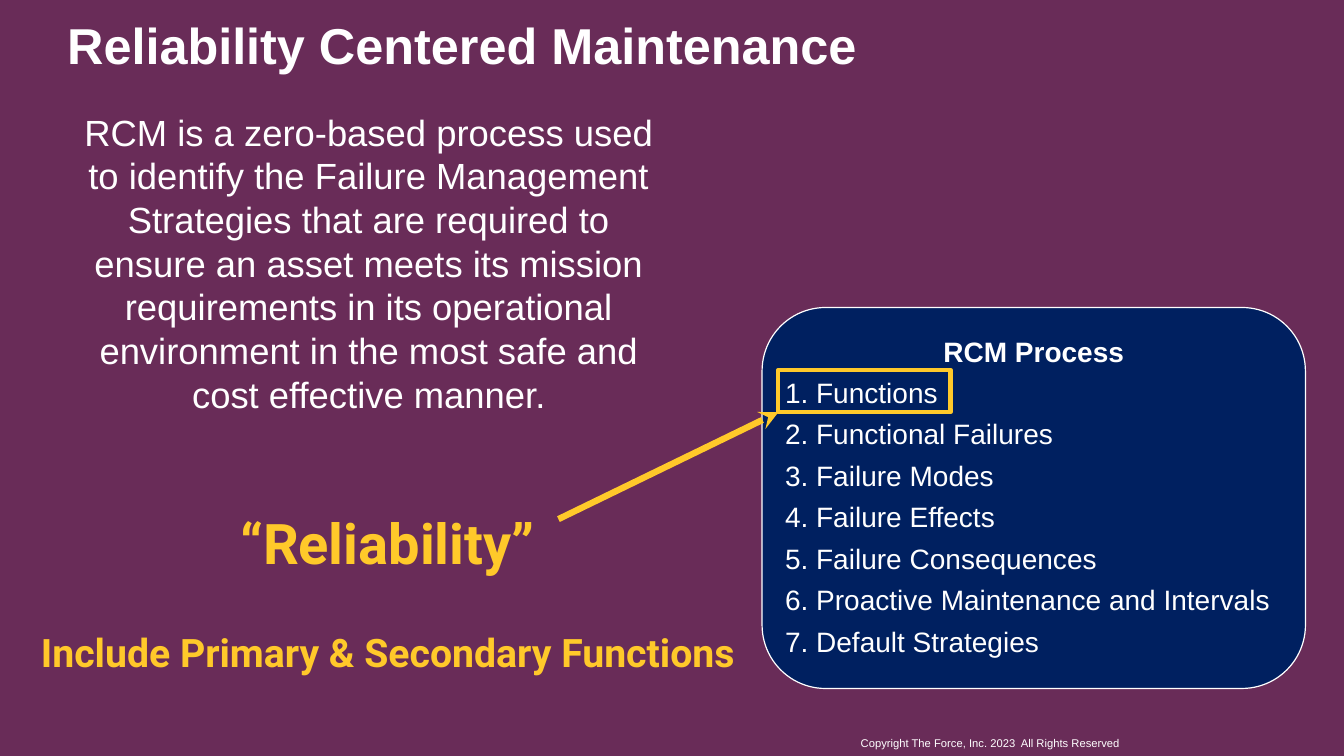
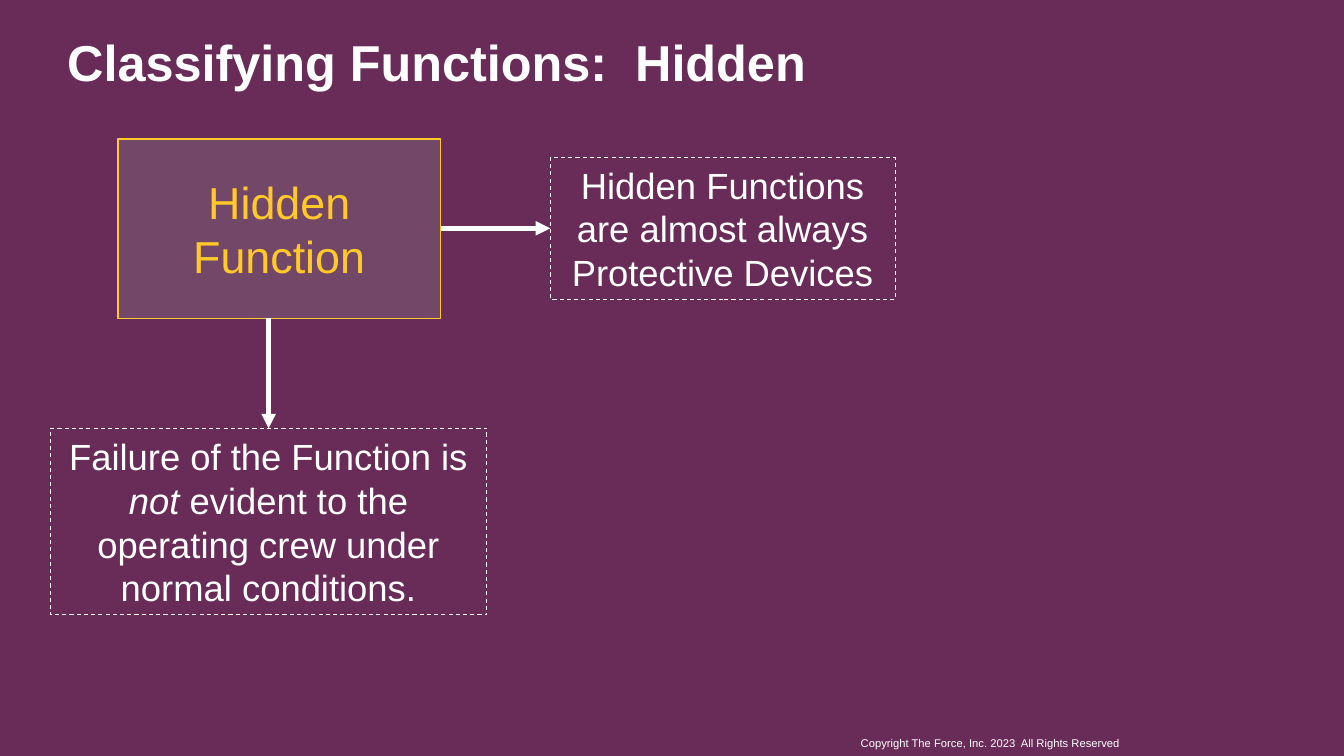
import typing

import lxml.etree
import pptx
import pptx.dml.color
import pptx.enum.dml
import pptx.enum.shapes
import pptx.enum.text
import pptx.oxml.ns
import pptx.util

COLORS = {
    "plum": "692C58",
    "navy": "002060",
    "gold": "FFC92A",
    "white": "FFFFFF",
    "gray": "919191",
}
BODY_FONT = "Arial"
CALLOUT_FONT = "Roboto"
COPYRIGHT = "Copyright The Force, Inc. 2023  All Rights Reserved"
PROCESS_STEPS = [
    "Functions",
    "Functional Failures",
    "Failure Modes",
    "Failure Effects",
    "Failure Consequences",
    "Proactive Maintenance and Intervals",
    "Default Strategies",
]
DEFINITION = (
    "RCM is a zero-based process used to identify the Failure Management "
    "Strategies that are required to ensure an asset meets its mission "
    "requirements in its operational environment in the most safe and "
    "cost effective manner."
)
ALIGN = pptx.enum.text.PP_ALIGN
ANCHOR = pptx.enum.text.MSO_ANCHOR
SHAPE = pptx.enum.shapes.MSO_SHAPE


class Box(typing.NamedTuple):
    """A rectangle in inches."""

    left: float
    top: float
    width: float
    height: float

    def inner(self, left, top, width, height):
        """Return an inner box given in percent of this one."""
        return Box(
            self.left + self.width * left / 100,
            self.top + self.height * top / 100,
            self.width * width / 100,
            self.height * height / 100,
        )

    def point(self, across, down):
        """Return a point given in percent of this box."""
        return self.inner(across, down, 0, 0)[:2]

    def emu(self):
        """Return the four lengths for python-pptx."""
        return [pptx.util.Inches(length) for length in self]


SLIDE = Box(0, 0, 13.33, 7.5)


def rgb(color):
    """Look up a named colour."""
    return pptx.dml.color.RGBColor.from_string(COLORS[color])


def write(frame, paragraphs, size, color="white", font=BODY_FONT, bold=False,
          align=ALIGN.CENTER, anchor=ANCHOR.TOP, inset=None):
    """Fill a text frame with paragraphs, each a list of (text, italic) runs."""
    frame.word_wrap = True
    frame.vertical_anchor = anchor
    if inset is not None:
        frame.margin_left = frame.margin_right = pptx.util.Inches(inset)
        frame.margin_top = frame.margin_bottom = pptx.util.Inches(inset)
    for index, runs in enumerate(paragraphs):
        paragraph = frame.paragraphs[0] if index == 0 else frame.add_paragraph()
        paragraph.alignment = align
        for text, italic in runs:
            run = paragraph.add_run()
            run.text = text
            run.font.name = font
            run.font.size = pptx.util.Pt(size)
            run.font.bold = bold
            run.font.italic = italic
            run.font.color.rgb = rgb(color)


def add_text(slide, box, text, size, **style):
    """Add a one-paragraph text box."""
    label = slide.shapes.add_textbox(*box.emu())
    write(label.text_frame, [[(text, False)]], size, **style)


def add_panel(slide, box, line, weight, fill=None, kind=SHAPE.RECTANGLE):
    """Add an outlined shape with an optional fill."""
    panel = slide.shapes.add_shape(kind, *box.emu())
    panel.shadow.inherit = False
    panel.line.color.rgb = rgb(line)
    panel.line.width = pptx.util.Pt(weight)
    if fill:
        panel.fill.solid()
        panel.fill.fore_color.rgb = rgb(fill)
    else:
        panel.fill.background()
    return panel


def add_arrow(slide, start, end, color, weight, head):
    """Add a straight arrow between two points in inches."""
    ends = [pptx.util.Inches(length) for length in (*start, *end)]
    arrow = slide.shapes.add_connector(pptx.enum.shapes.MSO_CONNECTOR.STRAIGHT, *ends)
    arrow.line.color.rgb = rgb(color)
    arrow.line.width = pptx.util.Pt(weight)
    qn = pptx.oxml.ns.qn
    properties = arrow.element.find(qn("p:spPr"))
    lxml.etree.SubElement(properties.find(qn("a:ln")), qn("a:tailEnd"), type=head)
    lxml.etree.SubElement(properties, qn("a:effectLst"))


def add_slide(deck, title, title_box):
    """Add a blank slide with its title and copyright line."""
    slide = deck.slides.add_slide(deck.slide_layouts[6])
    add_text(slide, SLIDE.inner(63.3, 96.8, 21.15, 3.2), COPYRIGHT, 8, align=ALIGN.LEFT)
    add_text(slide, title_box, title, 36, bold=True, align=ALIGN.LEFT,
             anchor=ANCHOR.BOTTOM, inset=0)
    return slide


def add_process(slide, box):
    """Draw the process panel and return the box around its first step."""
    add_panel(slide, box, "white", 0.85, "navy", SHAPE.ROUNDED_RECTANGLE)
    steps = slide.shapes.add_textbox(*box.inner(3.3, 4.8, 93.4, 90.4).emu())
    lines = ["RCM Process"]
    lines += [f"{number}. {step}" for number, step in enumerate(PROCESS_STEPS, 1)]
    write(steps.text_frame, [[(line, False)] for line in lines], 20,
          align=ALIGN.LEFT, anchor=ANCHOR.MIDDLE, inset=0.05)
    for paragraph in steps.text_frame.paragraphs:
        paragraph.line_spacing = 0.9
        paragraph.space_after = pptx.util.Pt(8)
    heading = steps.text_frame.paragraphs[0]
    heading.alignment = ALIGN.CENTER
    heading.runs[0].font.bold = True
    first_step = box.inner(3, 16.4, 31.7, 11.1)
    add_panel(slide, first_step, "gold", 3)
    return first_step


def add_callouts(slide, box, target):
    """Place the gold callouts and the arrow to the target point."""
    for text, size, place in (
        ("“Reliability”", 40, box.inner(15.83, 66.67, 26.03, 10.27)),
        ("Include Primary & Secondary Functions", 28, box.inner(1.88, 82.4, 53.93, 7.6)),
    ):
        add_text(slide, place, text, size, color="gold", font=CALLOUT_FONT, bold=True)
    add_arrow(slide, box.point(41.55, 68.67), target, "gold", 4.5, "stealth")


def add_note(slide, box, runs):
    """Add a dashed explanatory box."""
    note = add_panel(slide, box, "white", 0.75)
    note.line.dash_style = pptx.enum.dml.MSO_LINE.DASH
    write(note.text_frame, [runs], 26, anchor=ANCHOR.MIDDLE)


def add_hidden_function(slide, box):
    """Draw the hidden function with its two explanations."""
    function = box.inner(8.78, 18.4, 24, 23.73)
    failure = box.inner(3.75, 56.67, 32.48, 24.67)
    devices = box.inner(40.95, 20.8, 25.65, 18.8)
    block = add_panel(slide, function, "gold", 1, "gray")
    qn = pptx.oxml.ns.qn
    tint = block.element.find(f"{qn('p:spPr')}/{qn('a:solidFill')}/{qn('a:srgbClr')}")
    lxml.etree.SubElement(tint, qn("a:alpha"), val="27000")
    write(block.text_frame, [[("Hidden Function", False)]], 32, color="gold",
          anchor=ANCHOR.MIDDLE)
    add_note(slide, failure, [
        ("Failure of the Function is ", False),
        ("not", True),
        (" evident to the operating crew under normal conditions.", False),
    ])
    add_note(slide, devices, [
        ("Hidden Functions are almost always Protective Devices", False),
    ])
    below, beside = failure.point(50, 0), devices.point(0, 50)
    bottom = (below[0], function.top + function.height)
    side = (function.left + function.width, beside[1])
    for start, end in ((bottom, below), (side, beside)):
        add_arrow(slide, start, end, "white", 3.5, "triangle")


def build_process_slide(deck):
    """Build the slide on the maintenance process."""
    slide = add_slide(deck, "Reliability Centered Maintenance",
                      SLIDE.inner(5, 2.4, 68.8, 7.5))
    add_text(slide, SLIDE.inner(5, 13.87, 44.93, 42.13), DEFINITION, 26)
    first_step = add_process(slide, SLIDE.inner(56.7, 40.67, 40.43, 50.4))
    add_callouts(slide, SLIDE, first_step.point(0, 100))


def build_hidden_slide(deck):
    """Build the slide on hidden functions."""
    slide = add_slide(deck, "Classifying Functions:  Hidden",
                      SLIDE.inner(5, 3.5, 78.15, 8.65))
    add_hidden_function(slide, SLIDE)


def main():
    """Build and save the deck."""
    deck = pptx.Presentation()
    deck.slide_width = pptx.util.Inches(SLIDE.width)
    deck.slide_height = pptx.util.Inches(SLIDE.height)
    backdrop = deck.slide_master.background.fill
    backdrop.solid()
    backdrop.fore_color.rgb = rgb("plum")
    build_process_slide(deck)
    build_hidden_slide(deck)
    deck.save("out.pptx")


if __name__ == "__main__":
    main()
